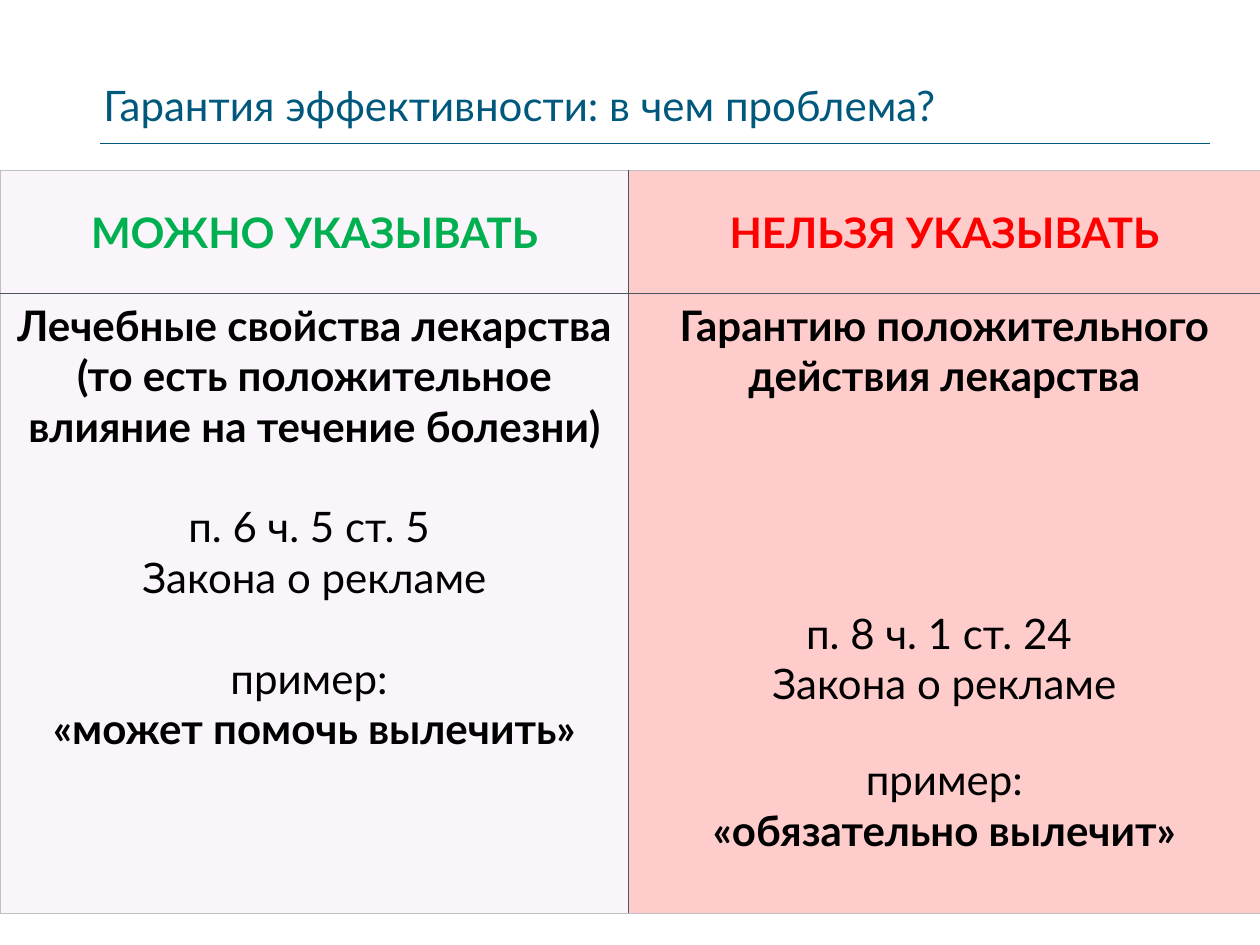
from lxml.etree import SubElement
from pptx import Presentation
from pptx.dml.color import RGBColor
from pptx.enum.shapes import MSO_CONNECTOR
from pptx.enum.text import MSO_ANCHOR as ANCHOR, PP_ALIGN as ALIGN
from pptx.oxml.ns import qn
from pptx.util import Inches, Pt

FONT, SIZE = "Lato", 24
TEAL, BLACK, GRID, EDGE = "00587C", "000000", "4C575C", "BFBFC4"
LINE = 28.8  # height of one text line, points

# Content: each paragraph is (text, bold, space before in points)
TITLE = "Гарантия эффективности: в чем проблема?"
COLUMNS = [
    {"width": 4.99, "fill": "F9F5FA", "color": "00B050",
     "head": "МОЖНО УКАЗЫВАТЬ",
     "body": [("Лечебные свойства лекарства ", True, 0),
              ("(то есть положительное влияние на течение болезни)", True, 0),
              ("п. 6 ч. 5 ст. 5 \nЗакона о рекламе", False, LINE),
              ("пример: ", False, LINE),
              ("«может помочь вылечить»", True, 0)]},
    {"width": 5.01, "fill": "FFCCCC", "color": "FF0000",
     "head": "НЕЛЬЗЯ УКАЗЫВАТЬ",
     "body": [("Гарантию положительного действия лекарства", True, 0),
              ("п. 8 ч. 1 ст. 24 \nЗакона о рекламе", False, 118.5),
              ("пример:", False, 26),
              ("«обязательно вылечит»", True, 0)]},
]
ROWS = [0.98, 4.92]


def rgb(value):
    return RGBColor.from_string(value)


def add_text(p, text, color, bold=False):
    for i, line in enumerate(text.split("\n")):
        if i:
            p.add_line_break()
        r = p.add_run()
        r.text = line
        r.font.name, r.font.size, r.font.bold = FONT, Pt(SIZE), bold
        r.font.color.rgb = rgb(color)


def fill_cell(cell, paragraphs, color, fill, anchor):
    cell.fill.solid()
    cell.fill.fore_color.rgb = rgb(fill)
    cell.vertical_anchor = anchor
    tf = cell.text_frame
    for i, (text, bold, before) in enumerate(paragraphs):
        p = tf.add_paragraph() if i else tf.paragraphs[0]
        p.alignment = ALIGN.CENTER
        p.space_before = Pt(before)
        add_text(p, text, color, bold)


def set_borders(cell, borders):
    """Borders are (color, points) for left, right, top and bottom."""
    tcPr = cell._tc.get_or_add_tcPr()
    for i, (side, (color, width)) in enumerate(zip("LRTB", borders)):
        ln = SubElement(tcPr, qn(f"a:ln{side}"), w=str(Pt(width)))
        SubElement(SubElement(ln, qn("a:solidFill")), qn("a:srgbClr"), val=color)
        tcPr.insert(i, ln)  # borders come before the fill


prs = Presentation()
prs.slide_width, prs.slide_height = Inches(10), Inches(7.5)
s = prs.slides.add_slide(prs.slide_layouts[6])

# Title and its rule
rule = s.shapes.add_connector(MSO_CONNECTOR.STRAIGHT, Inches(0.79), Inches(1.14),
                              Inches(9.6), Inches(1.14))
rule.line.color.rgb = rgb(TEAL)
rule.line.width = Pt(1)
SubElement(rule._element.spPr, qn("a:effectLst"))

title = s.shapes.add_textbox(Inches(0.82), Inches(0.29), Inches(9.18), Inches(0.75))
tf = title.text_frame
tf.word_wrap = True
tf.vertical_anchor = ANCHOR.BOTTOM
tf.margin_left = tf.margin_right = tf.margin_top = tf.margin_bottom = 0
tf.paragraphs[0].line_spacing = 0.95
add_text(tf.paragraphs[0], TITLE, TEAL)

# Comparison table
table = s.shapes.add_table(len(ROWS), len(COLUMNS), 0, Inches(1.35),
                           Inches(10), Inches(sum(ROWS))).table
table.horz_banding = False
for row, height in zip(table.rows, ROWS):
    row.height = Inches(height)

outer, middle, divider = (EDGE, 0.5), (GRID, 0.5), (GRID, 1)
for c, col in enumerate(COLUMNS):
    table.columns[c].width = Inches(col["width"])
    head, body = table.cell(0, c), table.cell(1, c)
    fill_cell(head, [(col["head"], True, 0)], col["color"], col["fill"], ANCHOR.MIDDLE)
    fill_cell(body, col["body"], BLACK, col["fill"], ANCHOR.TOP)
    sides = (middle if c else outer, outer if c else middle)
    set_borders(head, (*sides, outer, divider))
    set_borders(body, (*sides, divider, outer))

prs.save("out.pptx")
